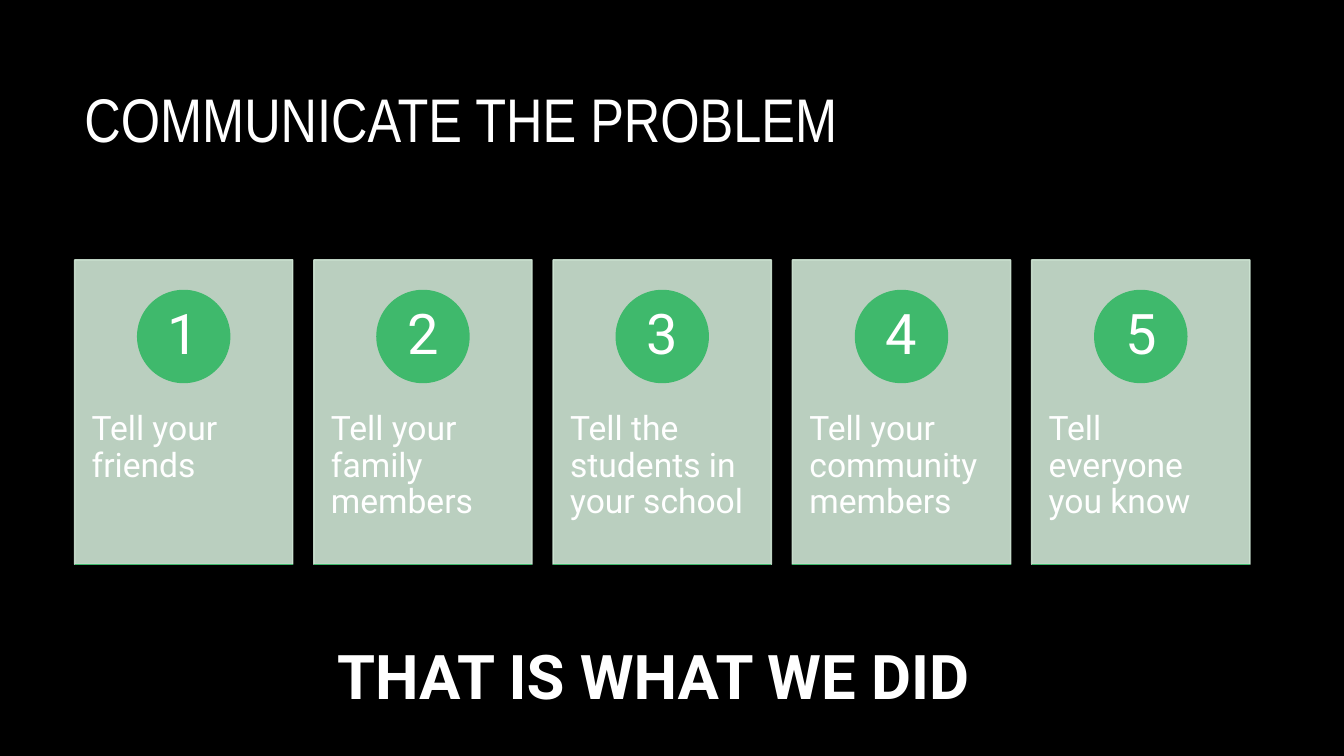
import dataclasses

import lxml.etree
import pptx
import pptx.dml.color
import pptx.enum.shapes
import pptx.enum.text
import pptx.oxml.ns
import pptx.util

Cm = pptx.util.Cm
ALIGN = pptx.enum.text.PP_ALIGN
SHAPE = pptx.enum.shapes.MSO_SHAPE

COLOURS = {"background": "000000", "text": "FFFFFF", "card": "CFE6D4", "accent": "3FB96C"}

# Card layout, in centimetres
CARD_LEFT, CARD_TOP = 1.88, 6.55
CARD_WIDTH, CARD_HEIGHT = 5.5, 7.67
CARD_PITCH = 6.03
CARD_OPACITY = 90
BADGE_SIZE, BADGE_TOP = 2.32, 7.32
ADVICE_TOP, ADVICE_HEIGHT = 9.47, 4.6


@dataclasses.dataclass(frozen=True)
class TextStyle:
    size: int
    font: str = "Roboto"
    bold: bool = False
    align: ALIGN = ALIGN.LEFT
    line_spacing: float = 0.9
    inset_x: float = 0.25
    inset_y: float = 0.13


@dataclasses.dataclass(frozen=True)
class Step:
    number: int
    advice: str


TITLE = TextStyle(44, font="Arial Narrow")
ADVICE = TextStyle(24, inset_x=0.43, inset_y=0.91)
NUMBER = TextStyle(40, align=ALIGN.CENTER, inset_x=0.18, inset_y=0.03)
CLOSING = TextStyle(44, bold=True, align=ALIGN.CENTER, line_spacing=1.0)

AUDIENCES = [
    "Tell your friends",
    "Tell your family members",
    "Tell the students in your school",
    "Tell your community members",
    "Tell everyone you know",
]
STEPS = [Step(number, advice) for number, advice in enumerate(AUDIENCES, start=1)]


def rgb(name: str) -> pptx.dml.color.RGBColor:
    return pptx.dml.color.RGBColor.from_string(COLOURS[name])


def write(shape, text: str, style: TextStyle) -> None:
    frame = shape.text_frame
    frame.word_wrap = True
    frame.margin_left = frame.margin_right = Cm(style.inset_x)
    frame.margin_top = frame.margin_bottom = Cm(style.inset_y)
    paragraph = frame.paragraphs[0]
    paragraph.text = text
    paragraph.alignment = style.align
    paragraph.line_spacing = style.line_spacing
    paragraph.font.name = style.font
    paragraph.font.size = pptx.util.Pt(style.size)
    paragraph.font.bold = style.bold
    paragraph.font.color.rgb = rgb("text")


def add_text(slide, left: float, top: float, width: float, height: float,
             text: str, style: TextStyle):
    box = slide.shapes.add_textbox(Cm(left), Cm(top), Cm(width), Cm(height))
    write(box, text, style)
    return box


def add_filled(slide, kind: SHAPE, left: float, top: float, width: float,
               height: float, colour: str, opacity: int = 100):
    shape = slide.shapes.add_shape(kind, Cm(left), Cm(top), Cm(width), Cm(height))
    shape.shadow.inherit = False
    shape.fill.solid()
    shape.fill.fore_color.rgb = rgb(colour)
    shape.line.color.rgb = rgb(colour)
    shape.line.width = pptx.util.Pt(1)
    if opacity < 100:
        for tint in shape._element.spPr.iter(pptx.oxml.ns.qn("a:srgbClr")):
            alpha = lxml.etree.SubElement(tint, pptx.oxml.ns.qn("a:alpha"))
            alpha.set("val", str(opacity * 1000))
    return shape


def add_base_line(slide, left: float, top: float, width: float) -> None:
    line = slide.shapes.add_connector(
        pptx.enum.shapes.MSO_CONNECTOR.STRAIGHT,
        Cm(left), Cm(top), Cm(left + width), Cm(top))
    line.line.color.rgb = rgb("accent")
    line.line.width = pptx.util.Pt(1)
    lxml.etree.SubElement(line._element.spPr, pptx.oxml.ns.qn("a:effectLst"))


def add_step(slide, step: Step) -> None:
    left = CARD_LEFT + (step.number - 1) * CARD_PITCH
    add_filled(slide, SHAPE.RECTANGLE, left, CARD_TOP, CARD_WIDTH, CARD_HEIGHT,
               "card", CARD_OPACITY)
    add_text(slide, left, ADVICE_TOP, CARD_WIDTH, ADVICE_HEIGHT, step.advice, ADVICE)
    badge = add_filled(slide, SHAPE.OVAL, left + (CARD_WIDTH - BADGE_SIZE) / 2,
                       BADGE_TOP, BADGE_SIZE, BADGE_SIZE, "accent")
    write(badge, str(step.number), NUMBER)
    badge.text_frame.vertical_anchor = pptx.enum.text.MSO_ANCHOR.MIDDLE
    add_base_line(slide, left, CARD_TOP + CARD_HEIGHT, CARD_WIDTH)


def main() -> None:
    deck = pptx.Presentation()
    deck.slide_width, deck.slide_height = Cm(33.87), Cm(19.05)
    slide = deck.slides.add_slide(deck.slide_layouts[6])
    slide.background.fill.solid()
    slide.background.fill.fore_color.rgb = rgb("background")

    # Title
    add_text(slide, CARD_LEFT, 2.11, 25.4, 3.5, "COMMUNICATE THE PROBLEM", TITLE)

    # Numbered cards
    for step in STEPS:
        add_step(slide, step)

    # Closing statement
    closing = add_text(slide, 7.47, 15.95, 18, 3.33, "THAT IS WHAT WE DID", CLOSING)
    closing.text_frame.auto_size = pptx.enum.text.MSO_AUTO_SIZE.SHAPE_TO_FIT_TEXT

    deck.save("out.pptx")


if __name__ == "__main__":
    main()
